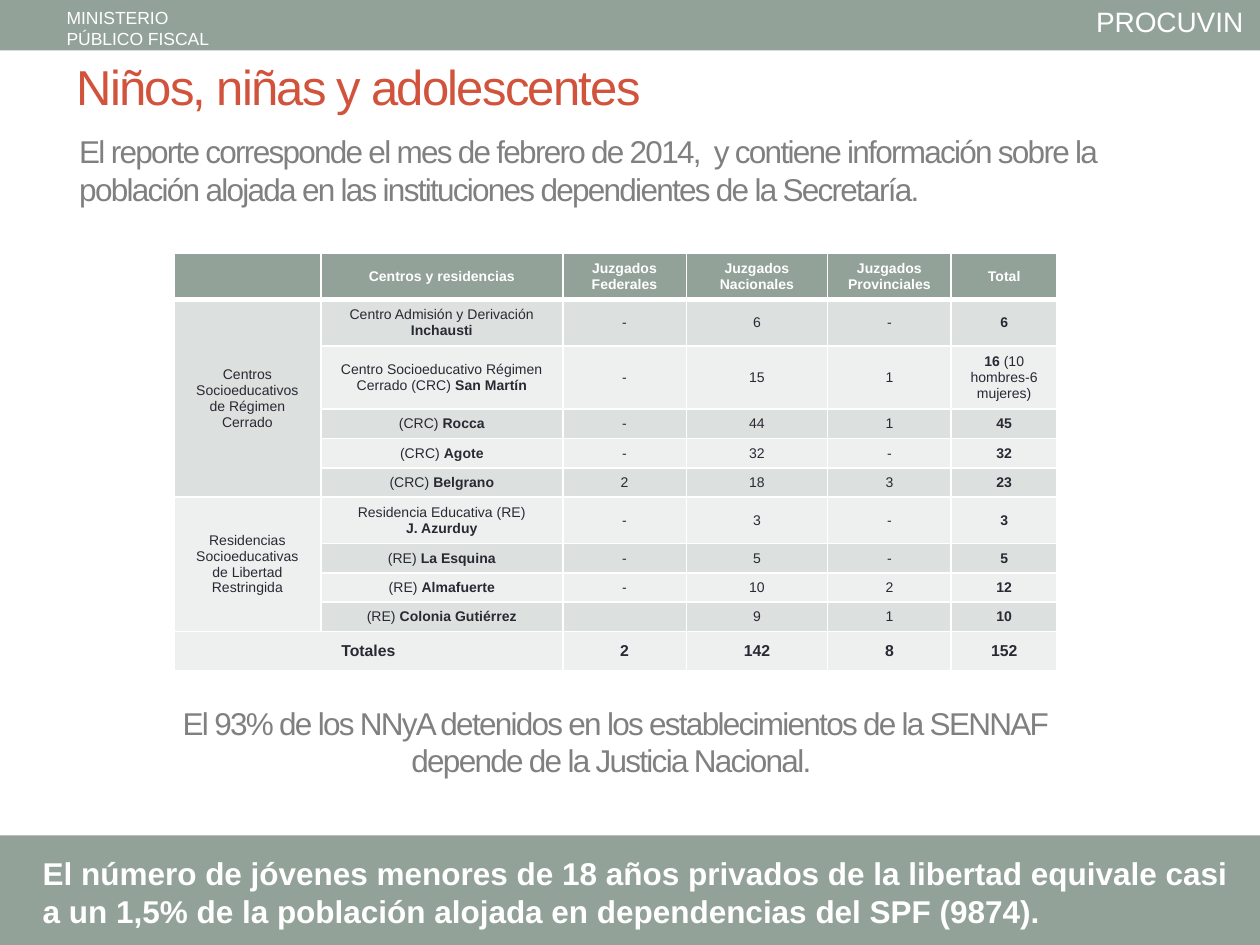
import pptx
import pptx.dml.color
import pptx.enum.shapes
import pptx.enum.text
import pptx.oxml
import pptx.oxml.ns
import pptx.util

Pt = pptx.util.Pt
ALIGN = pptx.enum.text.PP_ALIGN
ANCHOR = pptx.enum.text.MSO_ANCHOR

GREEN, RED, GREY = "93A299", "D2533C", "808080"
WHITE, INK, DARK_BAND, LIGHT_BAND = "FFFFFF", "292934", "DCE0DE", "EEF0EF"

BARS = [(0, 0, 720, 28.8), (0, 477.4, 720, 66)]

# text, (left, top, width, height), format
TEXTS = [
    ("PROCUVIN", (619.2, -0.7, 99.4, 26.6), dict(size=16, color=WHITE, wrap=False)),
    ("MINISTERIO\nPÚBLICO FISCAL", (31, 0.7, 96.5, 31.7), dict(size=10, color=WHITE)),
    ("El reporte corresponde el mes de febrero de 2014,  y contiene información sobre la "
     "población alojada en las instituciones dependientes de la Secretaría.",
     (38.2, 54.7, 665.3, 85), dict(size=18, color=GREY, anchor=ANCHOR.MIDDLE, spacing=-1)),
    ("Niños, niñas y adolescentes", (36.7, 4.3, 648, 90),
     dict(size=28, color=RED, anchor=ANCHOR.MIDDLE, spacing=-1)),
    ("El número de jóvenes menores de 18 años privados de la libertad equivale casi "
     "a un 1,5% de la población alojada en dependencias del SPF (9874).",
     (17.3, 484.6, 694.8, 51), dict(size=18, color=WHITE, bold=True)),
    ("El 93% de los NNyA detenidos en los establecimientos de la SENNAF "
     "depende de la Justicia Nacional. ", (76.3, 396, 550, 55.4),
     dict(size=18, color=GREY, anchor=ANCHOR.MIDDLE, align=ALIGN.CENTER, spacing=-1)),
]

# Asterisks enclose bold text
ROWS = [
    ["", "*Centros y residencias*", "*Juzgados Federales*", "*Juzgados Nacionales*",
     "*Juzgados Provinciales*", "*Total*"],
    ["Centros Socioeducativos de Régimen Cerrado",
     "Centro Admisión y Derivación *Inchausti*", "-", "6", "-", "*6*"],
    ["", "Centro Socioeducativo Régimen Cerrado (CRC) *San Martín*", "-", "15", "1",
     "*16 *(10 hombres-6 mujeres)"],
    ["", "(CRC) *Rocca*", "-", "44", "1", "*45*"],
    ["", "(CRC) *Agote*", "-", "32", "-", "*32*"],
    ["", "(CRC) *Belgrano*", "2", "18", "3", "*23*"],
    ["Residencias Socioeducativas de Libertad Restringida",
     "Residencia Educativa (RE)\v*J. Azurduy*", "-", "3", "-", "*3*"],
    ["", "(RE) *La Esquina*", "-", "5", "-", "*5*"],
    ["", "(RE) *Almafuerte*", "-", "10", "2", "*12*"],
    ["", "(RE) *Colonia Gutiérrez*", "", "9", "1", "*10*"],
    ["*Totales*", "", "*2*", "*142*", "*8*", "*152*"],
]
MERGES = [((1, 0), (5, 0)), ((6, 0), (9, 0)), ((10, 0), (10, 1))]
TABLE_LEFT, TABLE_TOP = 99.4, 144.9
COLUMN_WIDTHS = [84, 138.2, 70.6, 80.8, 70.6, 60.6]
ROW_HEIGHTS = [26.4, 26.4, 36, 16.8, 16.8, 16.8, 26.4, 16.8, 16.8, 16.8, 22.3]


def rgb(value):
    return pptx.dml.color.RGBColor.from_string(value)


def paint(target, color):
    target.fill.solid()
    target.fill.fore_color.rgb = rgb(color)


def style(span, size, color, bold=False):
    span.font.name = "Arial"
    span.font.size = Pt(size)
    span.font.bold = bold
    span.font.color.rgb = rgb(color)


def add_bar(page, place):
    bar = page.shapes.add_shape(pptx.enum.shapes.MSO_SHAPE.RECTANGLE, *map(Pt, place))
    bar.shadow.inherit = False
    paint(bar, GREEN)
    bar.line.fill.background()


def add_text(page, text, place, size, color, bold=False, wrap=True,
             anchor=ANCHOR.TOP, align=ALIGN.LEFT, spacing=0):
    box = page.shapes.add_textbox(*map(Pt, place))
    frame = box.text_frame
    frame.text = text
    frame.word_wrap = wrap
    frame.vertical_anchor = anchor
    for para in frame.paragraphs:
        para.alignment = align
        for span in para.runs:
            style(span, size, color, bold)
            if spacing:
                span.font._element.set("spc", str(spacing * 100))


def add_borders(cell, bottom_width):
    properties = cell._tc.get_or_add_tcPr()
    for side, width in (("L", 1), ("R", 1), ("T", 1), ("B", bottom_width)):
        properties.append(pptx.oxml.parse_xml(
            f'<a:ln{side} {pptx.oxml.ns.nsdecls("a")} w="{Pt(width)}"><a:solidFill>'
            f'<a:srgbClr val="{WHITE}"/></a:solidFill></a:ln{side}>'))


def fill_cell(cell, marked_text, size, color):
    cell.vertical_anchor = ANCHOR.MIDDLE
    para = cell.text_frame.paragraphs[0]
    plain, *rest = marked_text.split("*")
    para.text = plain
    para.alignment = ALIGN.CENTER
    for span in para.runs:
        style(span, size, color)
    for number, part in enumerate(rest):
        if part:
            span = para.add_run()
            span.text = part
            style(span, size, color, bold=number % 2 == 0)
    if not marked_text:
        # Keeps an empty cell from growing to the default text size
        para._p.get_or_add_endParaRPr().set("sz", str(size * 100))


def add_centre_table(page):
    frame = page.shapes.add_table(
        len(ROWS), len(COLUMN_WIDTHS), Pt(TABLE_LEFT), Pt(TABLE_TOP),
        Pt(sum(COLUMN_WIDTHS)), Pt(sum(ROW_HEIGHTS)))
    table = frame.table
    for column, width in zip(table.columns, COLUMN_WIDTHS):
        column.width = Pt(width)
    for row, height in zip(table.rows, ROW_HEIGHTS):
        row.height = Pt(height)
    for r, texts in enumerate(ROWS):
        header = r == 0
        band = GREEN if header else DARK_BAND if r % 2 else LIGHT_BAND
        size = 9 if r == len(ROWS) - 1 else 8
        for c, text in enumerate(texts):
            cell = table.cell(r, c)
            fill_cell(cell, text, size, WHITE if header else INK)
            add_borders(cell, 3 if header else 1)
            paint(cell, band)
    for first, last in MERGES:
        table.cell(*first).merge(table.cell(*last))


def main():
    deck = pptx.Presentation()
    deck.slide_width, deck.slide_height = Pt(720), Pt(540)
    page = deck.slides.add_slide(deck.slide_layouts[6])
    for place in BARS:
        add_bar(page, place)
    for text, place, options in TEXTS:
        add_text(page, text, place, **options)
    add_centre_table(page)
    deck.save("out.pptx")


if __name__ == "__main__":
    main()
